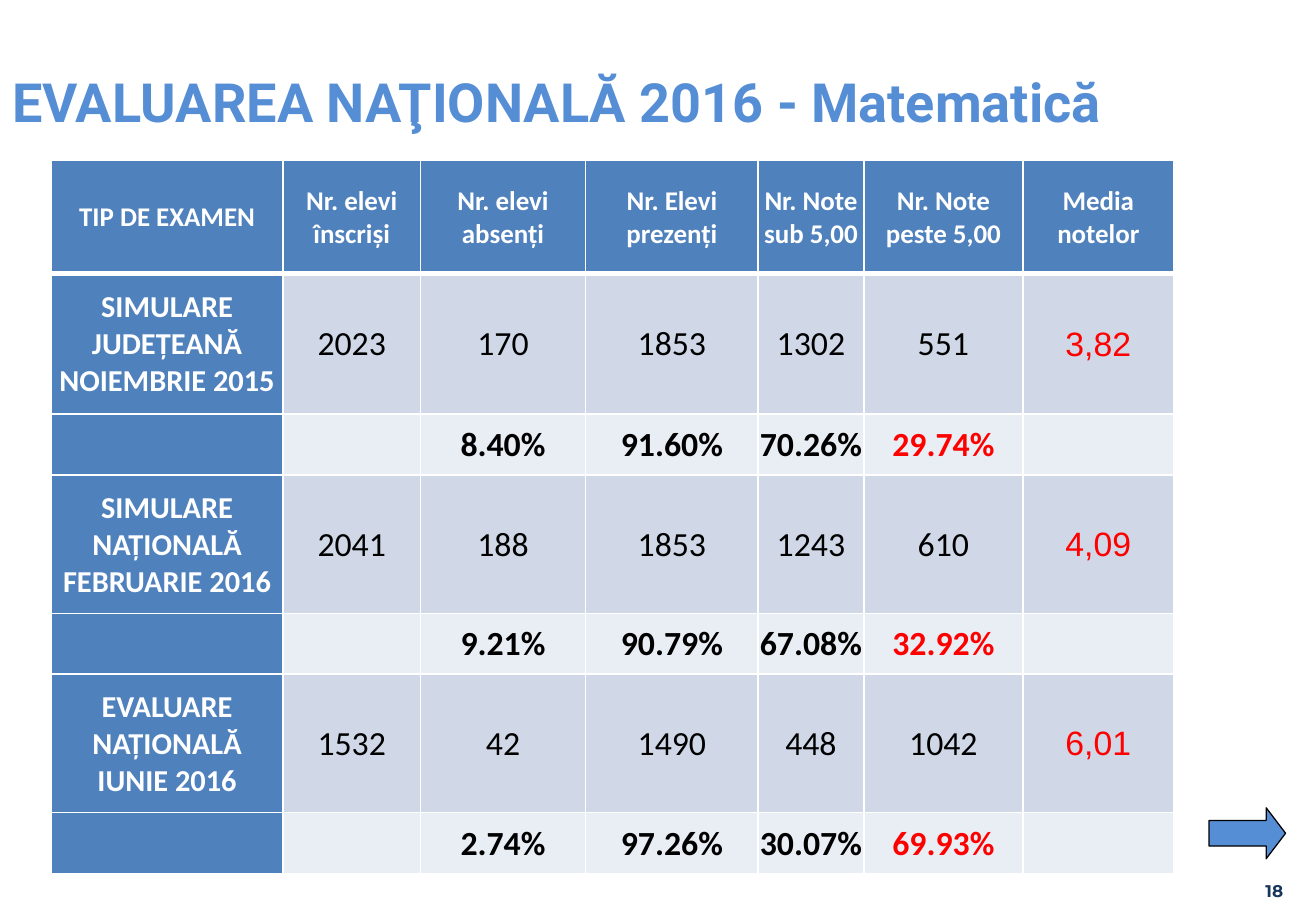
from lxml import etree
from pptx import Presentation
from pptx.dml.color import RGBColor
from pptx.enum.shapes import MSO_SHAPE
from pptx.enum.text import MSO_ANCHOR, PP_ALIGN
from pptx.oxml.ns import qn
from pptx.util import Inches, Pt

CENTER, LEFT, RIGHT = PP_ALIGN.CENTER, PP_ALIGN.LEFT, PP_ALIGN.RIGHT
MIDDLE, BOTTOM = MSO_ANCHOR.MIDDLE, MSO_ANCHOR.BOTTOM
RIGHT_ARROW = MSO_SHAPE.RIGHT_ARROW
TITLE_ONLY = 5

COLORS = {
    "title": "558ED5", "header": "4F81BD", "count_row": "D0D8E8",
    "percent_row": "E9EDF4", "white": "FFFFFF", "black": "000000",
    "red": "FF0000", "number": "17365C",
}

COL_WIDTHS = [1.91, 1.13, 1.36, 1.42, 0.87, 1.31, 1.24]
HEADER_HEIGHT, PERCENT_HEIGHT = 0.93, 0.5
HEADERS = ["TIP DE EXAMEN", "Nr. elevi\nînscriși", "Nr. elevi\nabsenți",
           "Nr. Elevi\nprezenți", "Nr. Note\nsub 5,00",
           "Nr. Note\npeste 5,00", "Media\nnotelor"]
# Exam, row height, counts with the mean, percentages
EXAMS = [
    ("SIMULARE\nJUDEȚEANĂ\nNOIEMBRIE 2015", 1.16,
     ["2023", "170", "1853", "1302", "551", "3,82"],
     ["8.40%", "91.60%", "70.26%", "29.74%"]),
    ("SIMULARE\nNAȚIONALĂ\nFEBRUARIE 2016", 1.14,
     ["2041", "188", "1853", "1243", "610", "4,09"],
     ["9.21%", "90.79%", "67.08%", "32.92%"]),
    ("EVALUARE\nNAȚIONALĂ\nIUNIE 2016", 1.14,
     ["1532", "42", "1490", "448", "1042", "6,01"],
     ["2.74%", "97.26%", "30.07%", "69.93%"]),
]
PEŞTE_COL = 5
MEAN_COL = 6


def rgb(name):
    return RGBColor.from_string(COLORS[name])


def write(tf, text, size=20, font="Calibri", color="black", bold=False, align=CENTER):
    """Fill a text frame, one paragraph for each line of text."""
    for i, line in enumerate(text.split("\n")):
        p = tf.add_paragraph() if i else tf.paragraphs[0]
        p.alignment = align
        r = p.add_run()
        r.text = line
        r.font.size, r.font.name, r.font.bold = Pt(size), font, bold
        r.font.color.rgb = rgb(color)


def add_border(cell, side, width):
    ln = etree.SubElement(cell._tc.get_or_add_tcPr(), qn("a:" + side), w=str(Pt(width)))
    fill = etree.SubElement(ln, qn("a:solidFill"))
    etree.SubElement(fill, qn("a:srgbClr"), val=COLORS["white"])


def format_cell(cell, text, fill, bottom=1, **fmt):
    for side, width in (("lnL", 1), ("lnR", 1), ("lnT", 1), ("lnB", bottom)):
        add_border(cell, side, width)
    cell.fill.solid()
    cell.fill.fore_color.rgb = rgb(fill)
    cell.vertical_anchor = MIDDLE
    cell.margin_left = cell.margin_right = cell.margin_top = Inches(0.01)
    cell.margin_bottom = 0
    if text:
        write(cell.text_frame, text, **fmt)


def add_title(s, text):
    sp = s.shapes.title
    sp.left, sp.top, sp.width, sp.height = Inches(0), Inches(0.26), Inches(10.03), Inches(1.15)
    sp.text_frame.vertical_anchor = MIDDLE
    write(sp.text_frame, text, size=32, font="Roboto", color="title", bold=True, align=LEFT)


def add_results_table(s):
    heights = [HEADER_HEIGHT]
    for exam in EXAMS:
        heights += [exam[1], PERCENT_HEIGHT]
    table = s.shapes.add_table(len(heights), len(COL_WIDTHS), Inches(0.42), Inches(1.32),
                               Inches(sum(COL_WIDTHS)), Inches(sum(heights))).table
    for col, width in zip(table.columns, COL_WIDTHS):
        col.width = Inches(width)
    for row, height in zip(table.rows, heights):
        row.height = Inches(height)

    # Header row
    for c, text in enumerate(HEADERS):
        format_cell(table.cell(0, c), text, "header", bottom=3,
                    size=16, color="white", bold=True)

    # A row of counts and a row of percentages for each exam
    for i, (name, _, counts, percents) in enumerate(EXAMS):
        top = 2 * i + 1
        format_cell(table.cell(top, 0), name, "header", size=18, color="white", bold=True)
        format_cell(table.cell(top + 1, 0), "", "header")
        for c, text in enumerate(counts, 1):
            mean = c == MEAN_COL
            format_cell(table.cell(top, c), text, "count_row",
                        font="Arial" if mean else "Calibri",
                        color="red" if mean else "black")
        for c, text in enumerate(["", *percents, ""], 1):
            format_cell(table.cell(top + 1, c), text, "percent_row", bold=True,
                        color="red" if c == PEŞTE_COL else "black")


def add_next_arrow(s):
    sp = s.shapes.add_shape(RIGHT_ARROW, Inches(9.95), Inches(6.65), Inches(0.63), Inches(0.42))
    sp.adjustments[0], sp.adjustments[1] = 0.5, 0.38
    sp.shadow.inherit = False
    sp.fill.solid()
    sp.fill.fore_color.rgb = rgb("title")
    sp.line.color.rgb = rgb("black")
    sp.line.width = Pt(0.75)


def add_page_number(s, text):
    sp = s.shapes.add_textbox(Inches(9.66), Inches(7.02), Inches(0.9), Inches(0.4))
    tf = sp.text_frame
    tf.word_wrap = True
    tf.vertical_anchor = BOTTOM
    tf.margin_left = tf.margin_right = tf.margin_top = tf.margin_bottom = 0
    write(tf, text, size=10, font="Montserrat", color="number", bold=True, align=RIGHT)


def main():
    prs = Presentation()
    prs.slide_width, prs.slide_height = Inches(10.83), Inches(7.5)
    s = prs.slides.add_slide(prs.slide_layouts[TITLE_ONLY])
    add_page_number(s, "18")
    add_title(s, "EVALUAREA NAŢIONALĂ 2016 - Matematică")
    add_results_table(s)
    add_next_arrow(s)
    prs.save("out.pptx")


if __name__ == "__main__":
    main()
